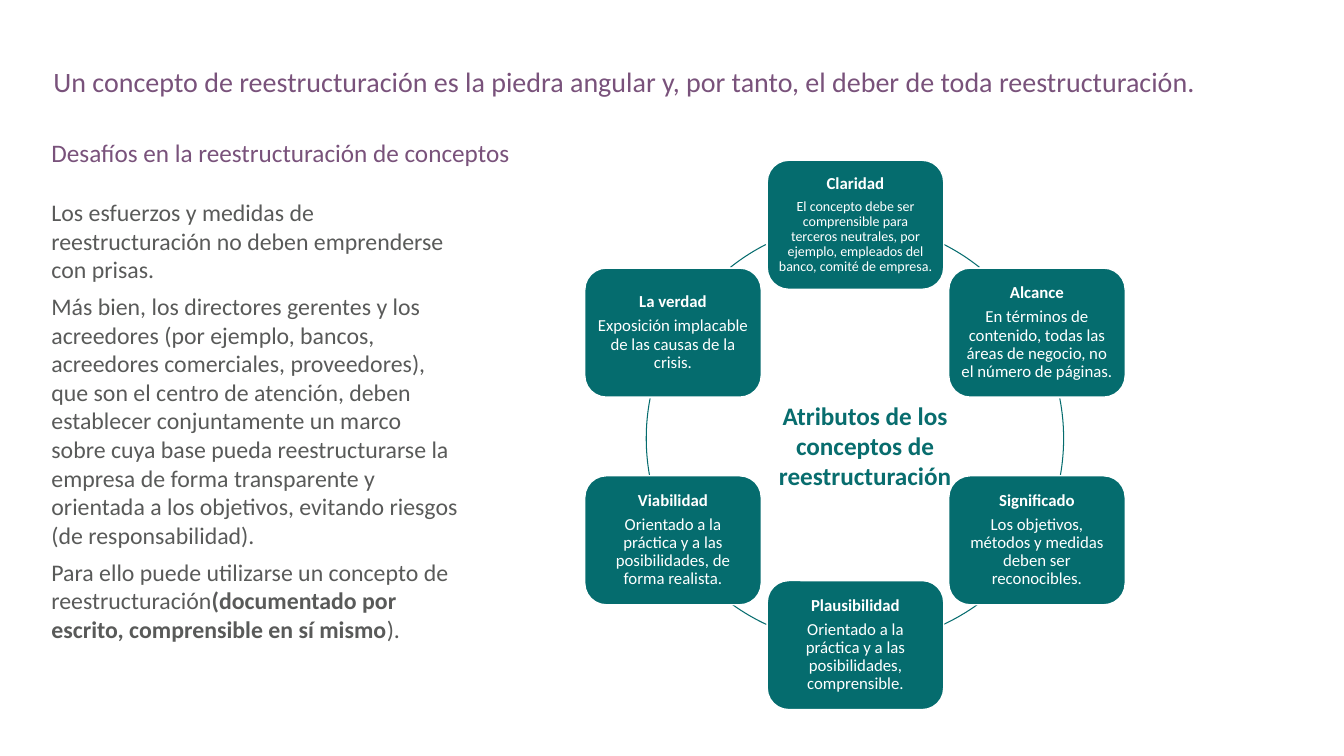
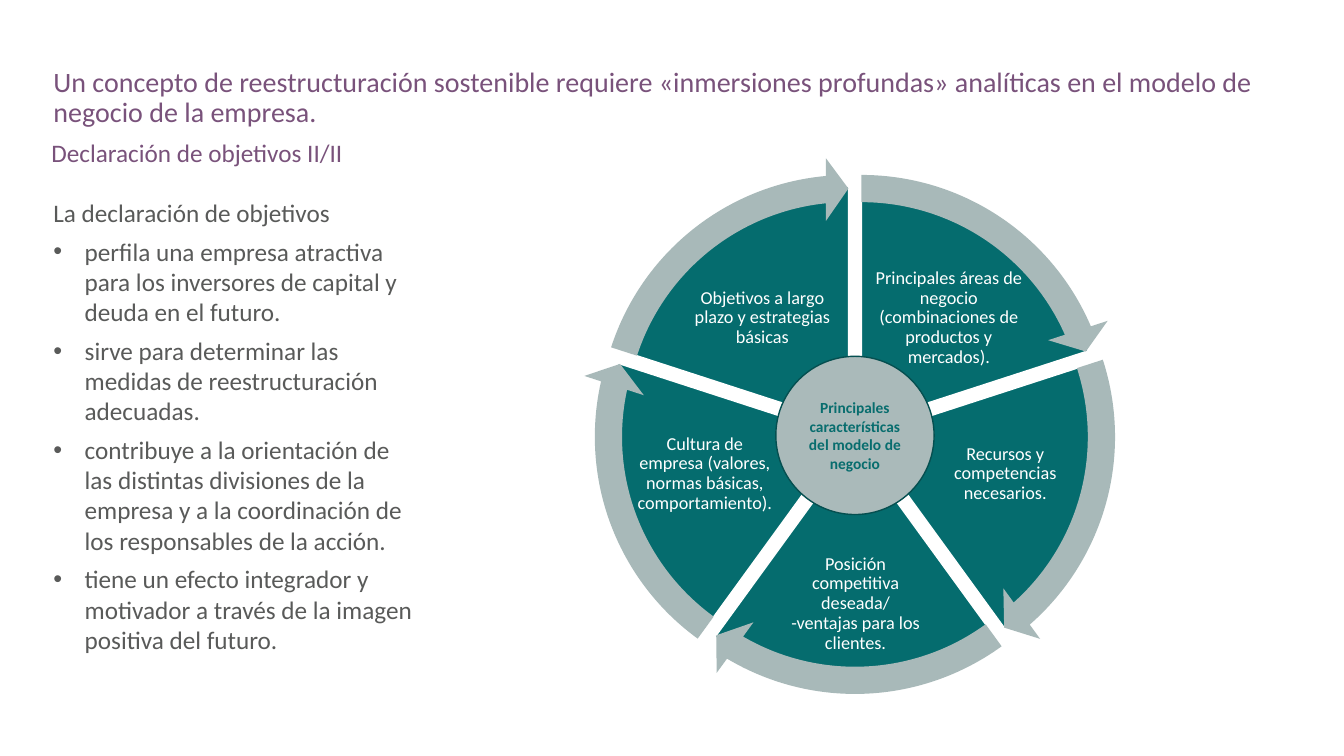
from math import cos, radians, sin

from lxml import etree
from pptx import Presentation
from pptx.dml.color import RGBColor
from pptx.enum.shapes import MSO_SHAPE
from pptx.enum.text import MSO_ANCHOR, MSO_AUTO_SIZE, PP_ALIGN
from pptx.oxml.ns import qn
from pptx.util import Inches, Pt

ROUNDED, PIE, ARC, OVAL = MSO_SHAPE.ROUNDED_RECTANGLE, MSO_SHAPE.PIE, MSO_SHAPE.ARC, MSO_SHAPE.OVAL
CURVED_ARROW = MSO_SHAPE.CIRCULAR_ARROW
TOP, MIDDLE = MSO_ANCHOR.TOP, MSO_ANCHOR.MIDDLE
LEFT, CENTER = PP_ALIGN.LEFT, PP_ALIGN.CENTER
NO_AUTOFIT = MSO_AUTO_SIZE.NONE

FONT = "Calibri"
COLORS = {
    "purple": "79527B", "gray": "595A59", "teal": "056C6E", "label": "086D6E",
    "arrow": "A8B9B9", "hub": "AABABA", "hub_line": "054F50", "white": "FFFFFF",
}
SLIDE_WIDTH, SLIDE_HEIGHT = 13.33, 7.5
TITLE_AREA = (0.43, 0.63, 12.54, 0.64)
SUBTITLE_AREA = (0.41, 1.35, 12.56, 0.28)
DEFAULT_INSETS = (0.1, 0.05)

CONCEPT = {
    "title": "Un concepto de reestructuración es la piedra angular y, por tanto, el deber de toda reestructuración.",
    "subtitle": "Desafíos en la reestructuración de conceptos",
    "area": (0.41, 1.75, 4.25, 4.84),
    "size": 17,
    "bulleted_from": None,
    "body": [
        [("Los esfuerzos y medidas de reestructuración no deben emprenderse con prisas.", False)],
        [("Más bien, los directores gerentes y los acreedores (por ejemplo, bancos, acreedores "
          "comerciales, proveedores), que son el centro de atención, deben establecer conjuntamente "
          "un marco sobre cuya base pueda reestructurarse la empresa de forma transparente y "
          "orientada a los objetivos, evitando riesgos (de responsabilidad).", False)],
        [("Para ello puede utilizarse un concepto de reestructuración", False),
         ("(documentado por escrito, comprensible en sí mismo", True), (").", False)],
    ],
}
MISSION = {
    "title": "Un concepto de reestructuración sostenible requiere «inmersiones profundas» analíticas "
             "en el modelo de negocio de la empresa.",
    "subtitle": "Declaración de objetivos II/II",
    "area": (0.43, 1.79, 3.81, 4.87),
    "size": 18,
    "bulleted_from": 1,
    "body": [
        [("La declaración de objetivos", False)],
        [("perfila una empresa atractiva para los inversores de capital y deuda en el futuro.", False)],
        [("sirve para determinar las medidas de reestructuración adecuadas.", False)],
        [("contribuye a la orientación de las distintas divisiones de la empresa y a la "
          "coordinación de los responsables de la acción.", False)],
        [("tiene un efecto integrador y motivador a través de la imagen positiva del futuro.", False)],
    ],
}

ATTRIBUTES_LABEL = "Atributos de los conceptos de reestructuración"
ATTRIBUTES = [
    ("Claridad", "El concepto debe ser comprensible para terceros neutrales, por ejemplo, "
                 "empleados del banco, comité de empresa.", 10, (1, 0)),
    ("Alcance", "En términos de contenido, todas las áreas de negocio, no el número de páginas.", 12, (2, 1)),
    ("Significado", "Los objetivos, métodos y medidas deben ser reconocibles.", 12, (2, 2)),
    ("Plausibilidad", "Orientado a la práctica y a las posibilidades, comprensible.", 12, (1, 3)),
    ("Viabilidad", "Orientado a la práctica y a las posibilidades, de forma realista.", 12, (0, 2)),
    ("La verdad", "Exposición implacable de las causas de la crisis.", 12, (0, 1)),
]
CARD_COLUMNS, CARD_ROWS = (5.8, 7.61, 9.41), (1.59, 2.66, 4.72, 5.76)
CARD_WIDTH, CARD_HEIGHT = 1.75, 1.28
RING_CENTER, RING_SIZE = (8.48, 4.31), 4.16
RIGHT_ARCS = [(-0.06, -0.03, -63, -51.5), (-0.01, 0.04, -11, 10), (0, 0, 54, 65)]

HUB_LABEL = "Principales características del modelo de negocio"
FEATURES = [
    ("Principales áreas de negocio (combinaciones de productos y mercados).", (8.65, 2.65, 1.52, 1.01)),
    ("Recursos y competencias necesarios.", (9.27, 4.14, 1.4, 1.12)),
    ("Posición competitiva deseada/ -ventajas para los clientes.", (7.81, 5.37, 1.35, 1.24)),
    ("Cultura de empresa (valores, normas básicas, comportamiento).", (6.29, 4.14, 1.4, 1.12)),
    ("Objetivos a largo plazo y estrategias básicas", (6.8, 2.65, 1.52, 1.01)),
]
WHEEL_CENTER, WEDGE_OFFSET, WEDGE_SIZE = (8.48, 4.3), 0.11, 4.72
HUB_CENTER, HUB_SIZE = (8.48, 4.32), 1.57
ARROW_SIZE, BAND_WIDTH, HEAD_HALF_WIDTH, HEAD_ANGLE = 5.3, 0.27, 0.31, 5.46
ANGLE_UNIT = 0.6


def color(name):
    return RGBColor.from_string(COLORS[name])


def inches(values):
    return [Inches(value) for value in values]


def polar(center, radius, angle):
    return (center[0] + radius * cos(radians(angle)), center[1] + radius * sin(radians(angle)))


def square_around(center, size):
    return (center[0] - size / 2, center[1] - size / 2, size, size)


def turn(*angles):
    return [angle % 360 * ANGLE_UNIT for angle in angles]


def prepare_frame(frame, anchor, insets=DEFAULT_INSETS):
    frame.word_wrap = True
    frame.auto_size = NO_AUTOFIT
    frame.vertical_anchor = anchor
    frame.margin_left = frame.margin_right = Inches(insets[0])
    frame.margin_top = frame.margin_bottom = Inches(insets[1])


def write_paragraph(frame, index, runs, size, tone, align=LEFT, spacing=1.0, before=0):
    paragraph = frame.paragraphs[0] if index == 0 else frame.add_paragraph()
    paragraph.alignment = align
    paragraph.line_spacing = spacing
    paragraph.space_before = Pt(before if index else 0)
    for text, bold in runs:
        run = paragraph.add_run()
        run.text = text
        run.font.name = FONT
        run.font.size = Pt(size)
        run.font.bold = bold
        run.font.color.rgb = color(tone)
    return paragraph


def set_indent(paragraph, bulleted):
    properties = paragraph._p.get_or_add_pPr()
    indent = Inches(0.31) if bulleted else 0
    properties.set("marL", str(indent))
    properties.set("indent", str(-indent))
    if not bulleted:
        etree.SubElement(properties, qn("a:buNone"))


def place(shape, area):
    shape.left, shape.top, shape.width, shape.height = inches(area)


def add_preset(slide, kind, area, fill=None, line=None, width=1, adjustments=()):
    shape = slide.shapes.add_shape(kind, *inches(area))
    shape.shadow.inherit = False
    if fill:
        shape.fill.solid()
        shape.fill.fore_color.rgb = color(fill)
    else:
        shape.fill.background()
    if line:
        shape.line.color.rgb = color(line)
        shape.line.width = Pt(width)
    else:
        shape.line.fill.background()
    for index, value in enumerate(adjustments):
        shape.adjustments[index] = value
    return shape


def add_label(slide, area, text, size, tone, bold=False, anchor=MIDDLE, insets=DEFAULT_INSETS, spacing=1.0):
    frame = slide.shapes.add_textbox(*inches(area)).text_frame
    prepare_frame(frame, anchor, insets)
    write_paragraph(frame, 0, [(text, bold)], size, tone, CENTER, spacing)


def add_content_slide(presentation, content):
    slide = presentation.slides.add_slide(presentation.slide_layouts[3])
    title, body, subtitle = slide.placeholders
    headings = [(title, TITLE_AREA, "title", 20), (subtitle, SUBTITLE_AREA, "subtitle", 18)]
    for heading, area, key, size in headings:
        place(heading, area)
        prepare_frame(heading.text_frame, TOP)
        paragraph = write_paragraph(heading.text_frame, 0, [(content[key], False)], size, "purple", spacing=0.9)
        set_indent(paragraph, False)
    place(body, content["area"])
    prepare_frame(body.text_frame, MIDDLE)
    first_bullet = content["bulleted_from"]
    for index, runs in enumerate(content["body"]):
        paragraph = write_paragraph(body.text_frame, index, runs, content["size"], "gray", before=6)
        set_indent(paragraph, first_bullet is not None and index >= first_bullet)
    return slide


def add_attribute_ring(slide):
    left_arcs = [(-shift, drop, 180 - end, 180 - start) for shift, drop, start, end in RIGHT_ARCS]
    for shift, drop, start, end in RIGHT_ARCS + left_arcs:
        center = (RING_CENTER[0] + shift, RING_CENTER[1] + drop)
        add_preset(slide, ARC, square_around(center, RING_SIZE), line="teal", width=0.75,
                   adjustments=turn(start, end))
    for name, description, size, (column, row) in ATTRIBUTES:
        area = (CARD_COLUMNS[column], CARD_ROWS[row], CARD_WIDTH, CARD_HEIGHT)
        frame = add_preset(slide, ROUNDED, area, "teal", "white").text_frame
        prepare_frame(frame, MIDDLE, (0.05, 0.05))
        write_paragraph(frame, 0, [(name, True)], 12, "white", CENTER, 0.9)
        write_paragraph(frame, 1, [(description, False)], size, "white", CENTER, 0.9, 4.2)
    add_label(slide, (7.59, 3.92, 1.98, 1.01), ATTRIBUTES_LABEL, 18, "label", True, TOP)


def add_curved_arrow(slide, center, start, end):
    head, tip, tail = turn(HEAD_ANGLE, end - HEAD_ANGLE, start)
    adjustments = (BAND_WIDTH / ARROW_SIZE, head, tip, tail, HEAD_HALF_WIDTH / ARROW_SIZE)
    add_preset(slide, CURVED_ARROW, square_around(center, ARROW_SIZE), "arrow", adjustments=adjustments)


def add_feature_wheel(slide):
    step = 360 / len(FEATURES)
    starts = [index * step - 90 for index in range(len(FEATURES))]
    centers = [polar(WHEEL_CENTER, WEDGE_OFFSET, start + step / 2) for start in starts]
    for start, center, (text, area) in zip(starts, centers, FEATURES):
        add_preset(slide, PIE, square_around(center, WEDGE_SIZE), "teal", "white",
                   adjustments=turn(start, start + step))
        add_label(slide, area, text, 13, "white", insets=(0.02, 0.02), spacing=0.9)
    for start, center in zip(starts, centers):
        add_curved_arrow(slide, center, start, start + step)
    hub = add_preset(slide, OVAL, square_around(HUB_CENTER, HUB_SIZE), "hub", "hub_line")
    prepare_frame(hub.text_frame, MIDDLE)
    write_paragraph(hub.text_frame, 0, [(HUB_LABEL, True)], 11, "label", CENTER)


def main():
    presentation = Presentation()
    presentation.slide_width = Inches(SLIDE_WIDTH)
    presentation.slide_height = Inches(SLIDE_HEIGHT)
    add_attribute_ring(add_content_slide(presentation, CONCEPT))
    add_feature_wheel(add_content_slide(presentation, MISSION))
    presentation.save("out.pptx")


if __name__ == "__main__":
    main()
